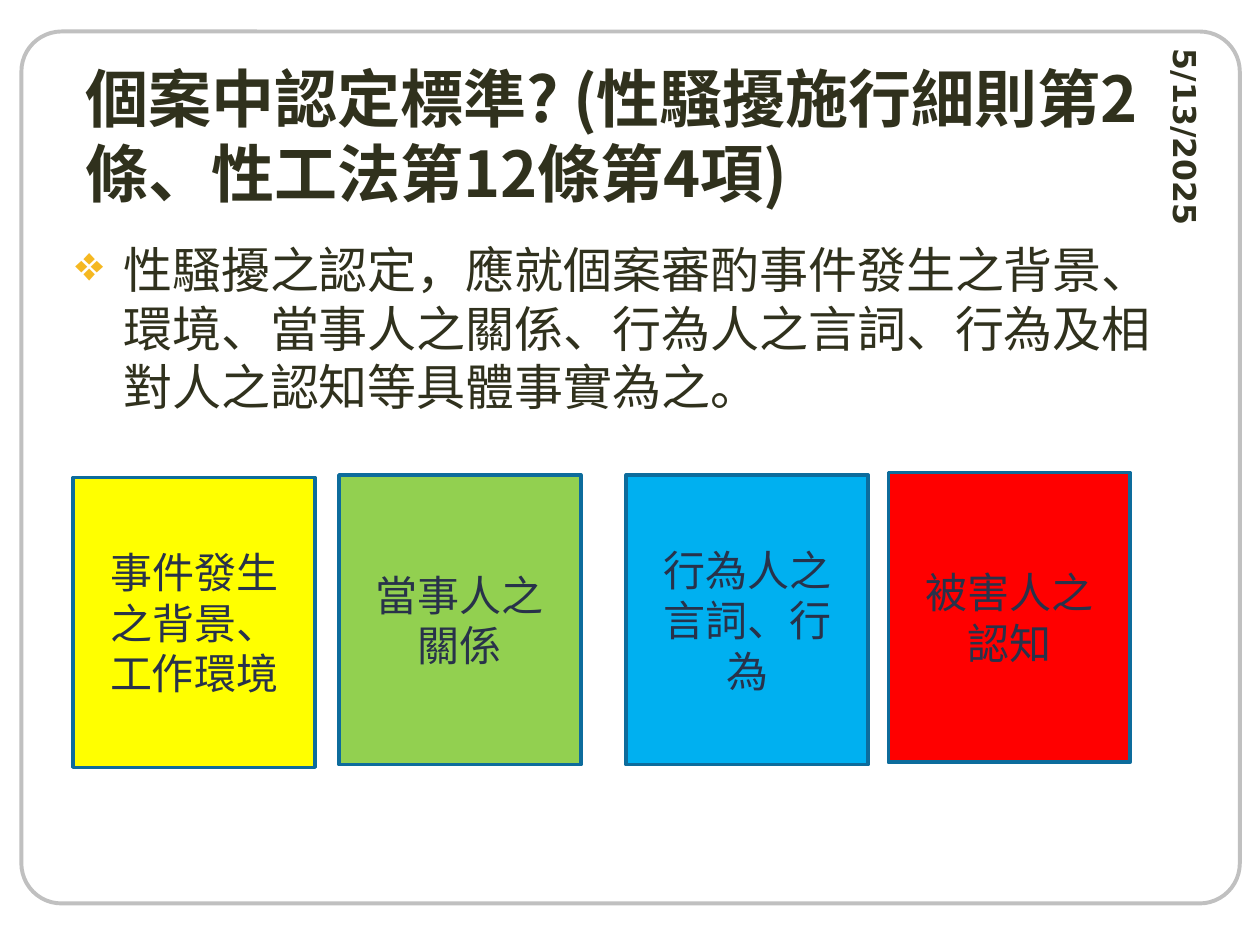
from lxml import etree
from pptx import Presentation
from pptx.dml.color import RGBColor
from pptx.enum import shapes, text
from pptx.oxml import ns
from pptx.util import Inches, Pt

INK, NAVY, EDGE, FRAME, GOLD = "30311D", "28324A", "0D6C9C", "C0C0C0", "F5B821"
CJK = "Noto Sans CJK SC"
TITLE = "個案中認定標準? (性騷擾施行細則第2條、性工法第12條第4項)"
BODY = "性騷擾之認定，應就個案審酌事件發生之背景、環境、當事人之關係、行為人之言詞、行為及相對人之認知等具體事實為之。"
DATE = "5/13/2025"
FACTORS = [
    ("事件發生之背景、工作環境", "FFFF00", 0.58, 3.79),
    ("當事人之關係", "92D050", 2.69, 3.77),
    ("行為人之言詞、行為", "00B0F0", 4.97, 3.77),
    ("被害人之認知", "FF0000", 7.05, 3.75),
]
FACTOR_SIZE = (1.92, 2.3)


def rgb(value):
    return RGBColor.from_string(value)


def add_child(parent, tag, **attributes):
    return etree.SubElement(parent, ns.qn(tag), attributes)


def add_run(paragraph, words, size, font, color, bold=False):
    run = paragraph.add_run()
    run.text = words
    run.font.size = Pt(size)
    run.font.name = font
    run.font.bold = bold
    run.font.color.rgb = rgb(color)
    if font == CJK:
        add_child(run._r.get_or_add_rPr(), "a:ea", typeface=font)
    return run


def add_text(slide, place, words, size, font, bold=False):
    box = slide.shapes.add_textbox(*map(Inches, place))
    box.text_frame.word_wrap = True
    paragraph = box.text_frame.paragraphs[0]
    run = add_run(paragraph, words, size, font, INK, bold)
    return box, paragraph, run


def add_panel(slide, preset, place, line, width, fill=None):
    panel = slide.shapes.add_shape(preset, *map(Inches, place))
    panel.shadow.inherit = False
    panel.line.color.rgb = rgb(line)
    panel.line.width = Pt(width)
    if fill:
        panel.fill.solid()
        panel.fill.fore_color.rgb = rgb(fill)
    else:
        panel.fill.background()
    return panel


def add_title(slide):
    title, _, run = add_text(slide, (0.58, 0.78, 8.83, 0.58), TITLE, 36, CJK, True)
    title.text_frame.vertical_anchor = text.MSO_ANCHOR.MIDDLE
    effects = etree.Element(ns.qn("a:effectLst"))
    shadow = add_child(effects, "a:outerShdw", dist="38100", dir="2700000")
    add_child(shadow, "a:srgbClr", val=INK)
    run._r.get_or_add_rPr().find(ns.qn("a:solidFill")).addnext(effects)


def add_body(slide):
    _, paragraph, _ = add_text(slide, (0.5, 1.85, 8.92, 5.06), BODY, 28, CJK)
    properties = paragraph._p.get_or_add_pPr()
    properties.set("marL", str(Inches(0.38)))
    properties.set("indent", str(Inches(-0.38)))
    before = add_child(properties, "a:spcBef")
    add_child(before, "a:spcPct", val="20000")
    bullet_color = add_child(properties, "a:buClr")
    add_child(bullet_color, "a:srgbClr", val=GOLD)
    add_child(properties, "a:buChar", char="❖")


def add_factor(slide, words, fill, left, top):
    card = add_panel(slide, shapes.MSO_SHAPE.RECTANGLE, (left, top, *FACTOR_SIZE), EDGE, 2, fill)
    frame = card.text_frame
    frame.word_wrap = True
    frame.vertical_anchor = text.MSO_ANCHOR.MIDDLE
    frame.margin_left = frame.margin_right = Inches(0.13)
    frame.margin_top = frame.margin_bottom = Inches(0.13)
    paragraph = frame.paragraphs[0]
    paragraph.alignment = text.PP_ALIGN.CENTER
    paragraph.space_before = Pt(6)
    add_run(paragraph, words, 24, "Lato", NAVY)


def main():
    deck = Presentation()
    deck.slide_width, deck.slide_height = Inches(10), Inches(7.5)
    slide = deck.slides.add_slide(deck.slide_layouts[6])
    border = add_panel(slide, shapes.MSO_SHAPE.ROUNDED_RECTANGLE, (0.17, 0.25, 9.67, 6.92), FRAME, 2.25)
    border.adjustments[0] = 0.046
    add_title(slide)
    add_body(slide)
    date, _, _ = add_text(slide, (8.3, 1.18, 2.2, 0.42), DATE, 18, "DejaVu Sans", True)
    date.rotation = 90
    for factor in FACTORS:
        add_factor(slide, *factor)
    deck.save("out.pptx")


if __name__ == "__main__":
    main()
